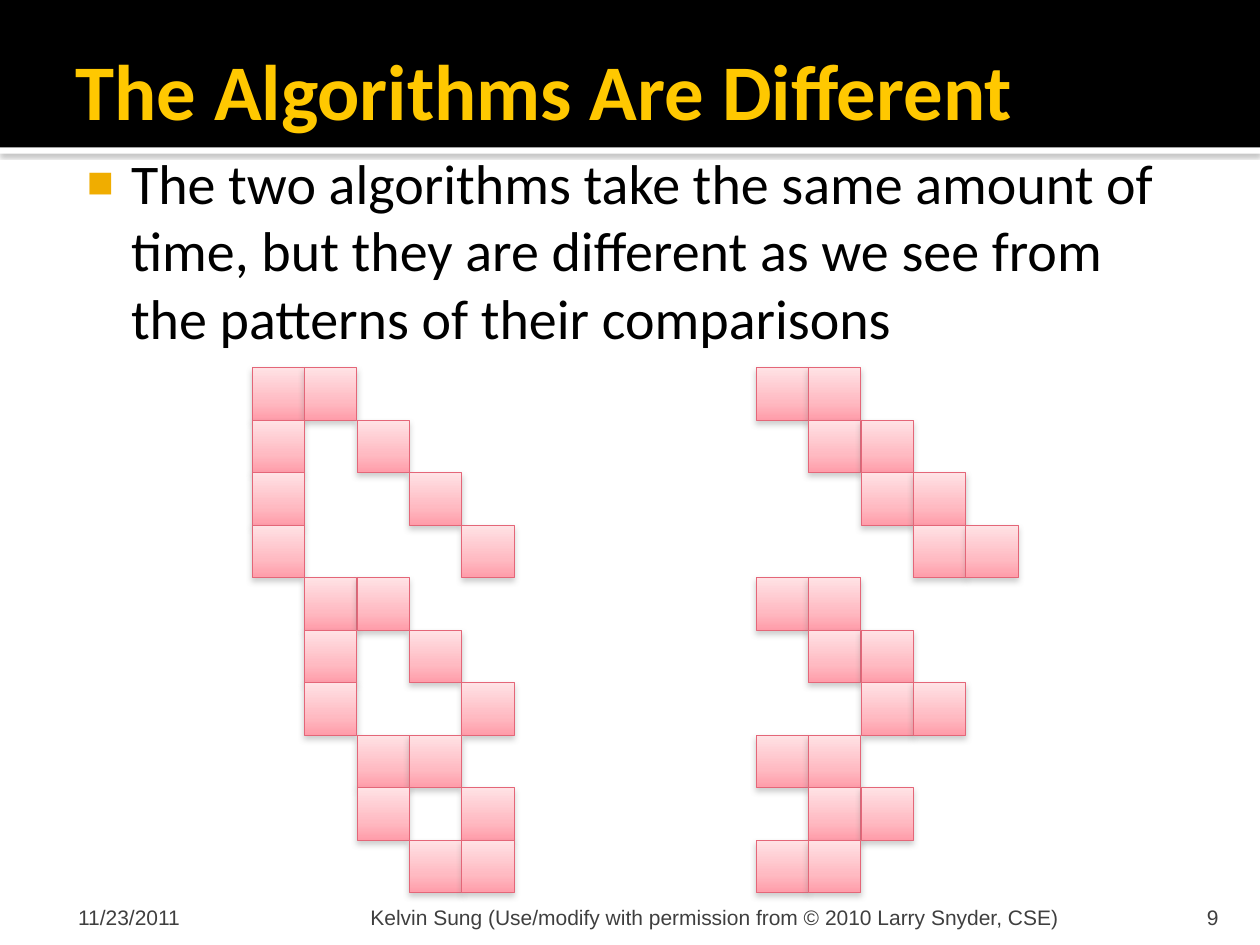
from copy import deepcopy
from itertools import combinations

from lxml import etree
from pptx import Presentation
from pptx.dml.color import RGBColor
from pptx.enum.shapes import MSO_SHAPE
from pptx.enum.text import MSO_ANCHOR, MSO_AUTO_SIZE, PP_ALIGN
from pptx.oxml.ns import qn
from pptx.util import Inches, Pt

RECTANGLE = MSO_SHAPE.RECTANGLE
LEFT, RIGHT = PP_ALIGN.LEFT, PP_ALIGN.RIGHT
TOP, MIDDLE, BOTTOM = MSO_ANCHOR.TOP, MSO_ANCHOR.MIDDLE, MSO_ANCHOR.BOTTOM
NO_AUTOFIT = MSO_AUTO_SIZE.NONE

ITEMS = 5
CELL = 1.25 / 3
PATTERN_TOP = 2.92
CELL_GRADIENT = [(0, "FFE2E5"), (0.65, "FFBAC2"), (1, "FF9CA9")]


def color(hex_value):
    return RGBColor.from_string(hex_value)


def place(element, left, top, width, height):
    element.left, element.top = Inches(left), Inches(top)
    element.width, element.height = Inches(width), Inches(height)


def write(holder, text, size, font, hex_value, bold=False, align=LEFT,
          anchor=TOP, insets=(0.1, 0.05, 0.05, 0.05), space_before=0):
    frame = holder.text_frame
    frame.word_wrap = True
    frame.auto_size = NO_AUTOFIT
    frame.vertical_anchor = anchor
    (frame.margin_left, frame.margin_top,
     frame.margin_right, frame.margin_bottom) = map(Inches, insets)
    paragraph = frame.paragraphs[0]
    paragraph.alignment = align
    paragraph.space_before = Pt(space_before)
    run = paragraph.add_run()
    run.text = text
    run.font.size = Pt(size)
    run.font.name = font
    run.font.bold = bold
    run.font.color.rgb = color(hex_value)
    return paragraph


def add_bullet(paragraph, symbol, hex_value, percent, margin, indent):
    properties = paragraph._p.get_or_add_pPr()
    properties.set("marL", str(Inches(margin)))
    properties.set("indent", str(Inches(indent)))
    bullet_color = etree.SubElement(properties, qn("a:buClr"))
    etree.SubElement(bullet_color, qn("a:srgbClr"), val=hex_value)
    etree.SubElement(properties, qn("a:buSzPct"), val=str(percent * 1000))
    etree.SubElement(properties, qn("a:buFont"), typeface="Arial")
    etree.SubElement(properties, qn("a:buChar"), char=symbol)


def add_shadow(shape, opacity, blur, distance):
    effects = shape._element.spPr.find(qn("a:effectLst"))
    shadow = etree.SubElement(
        effects, qn("a:outerShdw"), blurRad=str(Pt(blur)),
        dist=str(Pt(distance)), dir="5400000", rotWithShape="0")
    tint = etree.SubElement(shadow, qn("a:srgbClr"), val="808080")
    etree.SubElement(tint, qn("a:alpha"), val=str(opacity * 1000))


def add_rectangle(shapes, left, top, width, height):
    rectangle = shapes.add_shape(RECTANGLE, 0, 0, 0, 0)
    place(rectangle, left, top, width, height)
    rectangle.shadow.inherit = False
    return rectangle


def add_band(slide, top, height, hex_value):
    band = add_rectangle(slide.shapes, 0, top, 10, height)
    band.fill.solid()
    band.fill.fore_color.rgb = color(hex_value)
    band.line.fill.background()
    slide.shapes._spTree.insert(2, band._element)
    return band


def add_cell(shapes, left, top):
    cell = add_rectangle(shapes, left, top, CELL, CELL)
    cell.fill.gradient()
    cell.fill.gradient_angle = 270
    stop_list = cell._element.spPr.find(".//" + qn("a:gsLst"))
    stop_list.append(deepcopy(stop_list[-1]))
    for stop, (position, hex_value) in zip(cell.fill.gradient_stops, CELL_GRADIENT):
        stop.position = position
        stop.color.rgb = color(hex_value)
    cell.line.color.rgb = color("E46678")
    cell.line.width = Pt(0.5)
    add_shadow(cell, 38, 3.5, 2)


def add_pattern(slide, left, comparisons):
    group = slide.shapes.add_group_shape()
    for row, pair in enumerate(comparisons):
        for column in pair:
            add_cell(group.shapes, left + column * CELL, PATTERN_TOP + row * CELL)


def add_footer(slide, text, left, width, align=LEFT, insets=(0.05, 0.05, 0.05, 0)):
    footer = slide.shapes.add_textbox(0, 0, 0, 0)
    place(footer, left, 7.08, width, 0.3)
    write(footer, text, 12, "Arial", "3F3F3F", align=align, anchor=BOTTOM, insets=insets)


def main():
    deck = Presentation()
    deck.slide_width, deck.slide_height = Inches(10), Inches(7.5)
    slide = deck.slides.add_slide(deck.slide_layouts[1])

    add_band(slide, 0, 1.17, "000000")
    divider = add_band(slide, 1.17, 0.05, "FFFFFF")
    add_shadow(divider, 60, 2.5, 0.8)

    title, body = slide.placeholders
    place(title, 0.5, 0.17, 9, 1.08)
    write(title, "The Algorithms Are Different", 45, "Calibri", "FFC800",
          bold=True, anchor=MIDDLE)
    place(body, 0.5, 1.08, 9, 5.67)
    statement = write(
        body,
        "The two algorithms take the same amount of time, but they are different "
        "as we see from the patterns of their comparisons",
        32, "Calibri", "000000", insets=(0.06, 0.1, 0.1, 0.05), space_before=2)
    add_bullet(statement, "■", "F0AD00", 80, 0.48, -0.35)

    add_footer(slide, "11/23/2011", 0.5, 2.33, insets=(0.12, 0.05, 0.05, 0))
    add_footer(slide, "Kelvin Sung (Use/modify with permission from © 2010 Larry Snyder, CSE)",
               2.89, 6.02)
    add_footer(slide, "9", 8.97, 0.8, align=RIGHT, insets=(0.1, 0.05, 0.1, 0))

    neighbours = [(first, first + 1)
                  for unsorted in range(ITEMS - 1, 0, -1)
                  for first in range(unsorted)]
    add_pattern(slide, 6, neighbours)
    add_pattern(slide, 2, combinations(range(ITEMS), 2))

    deck.save("out.pptx")


if __name__ == "__main__":
    main()
